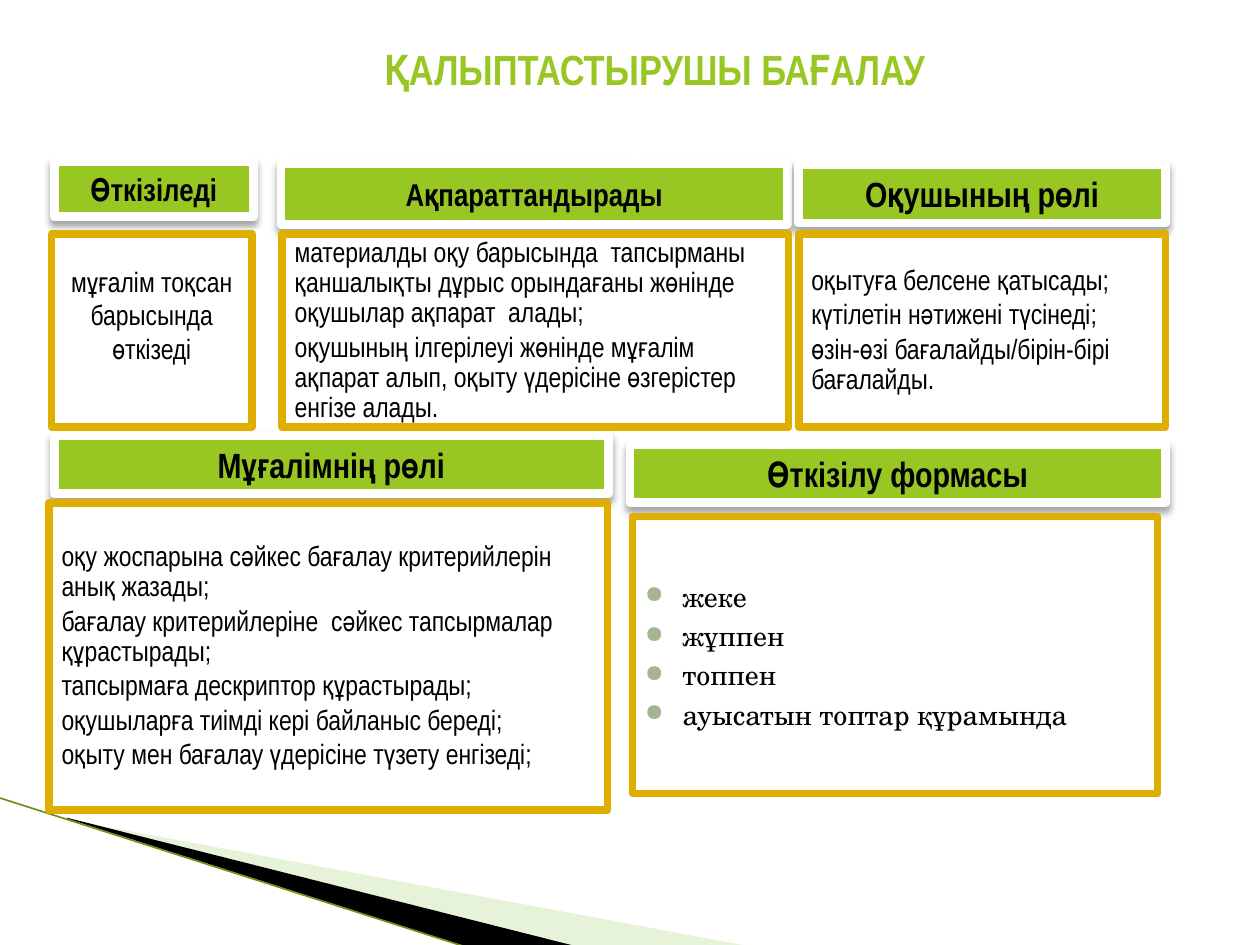
from dataclasses import dataclass

from lxml import etree
from pptx import Presentation
from pptx.dml.color import RGBColor
from pptx.enum import shapes, text
from pptx.oxml import ns
from pptx.util import Pt

GREEN = RGBColor(0x98, 0xC7, 0x23)
PALE = RGBColor(0xC5, 0xE1, 0x9F)
OLIVE = RGBColor(0x71, 0x8F, 0x1A)
GOLD = RGBColor(0xDE, 0xAE, 0x00)
BLACK = RGBColor(0, 0, 0)
WHITE = RGBColor(0xFF, 0xFF, 0xFF)
SAGE = RGBColor(0xA5, 0xB5, 0x92)
NARROW = "Arial Narrow"
SERIF = "TeX Gyre Schola"
LEFT = text.PP_ALIGN.LEFT
MID = text.PP_ALIGN.CENTER


@dataclass
class Head:
    x: float
    y: float
    w: float
    h: float
    label: str
    size: int = 20


@dataclass
class Body:
    x: float
    y: float
    w: float
    h: float
    lines: list[str]
    align: int = LEFT
    font: str = NARROW
    bullet: bool = False
    foot: float = 3.6


HEADS = [
    Head(31, 92.2, 113.8, 31.7, "Өткізіледі", 18),
    Head(160.6, 93.6, 289.4, 34.6, "Ақпараттандырады", 18),
    Head(456.5, 94.3, 209.5, 33.1, "Оқушының рөлі"),
    Head(31, 249.1, 316.8, 33.1, "Мұғалімнің рөлі"),
    Head(360, 254.2, 306, 33.1, "Өткізілу формасы"),
]

BODIES = [
    Body(29.5, 133.9, 114.5, 110.2, ["мұғалім тоқсан барысында өткізеді"], MID, foot=22),
    Body(161.3, 133.9, 289.4, 110.2, [
        "материалды оқу барысында  тапсырманы қаншалықты дұрыс орындағаны "
        "жөнінде оқушылар ақпарат  алады;",
        "оқушының ілгерілеуі жөнінде мұғалім ақпарат алып, оқыту үдерісіне "
        "өзгерістер енгізе алады.",
    ]),
    Body(456.5, 133.9, 209.5, 110.2, [
        "оқытуға белсене қатысады;",
        "күтілетін нәтижені түсінеді;",
        "өзін-өзі бағалайды/бірін-бірі бағалайды.",
    ]),
    Body(28.1, 287.3, 319, 175.7, [
        "оқу жоспарына сәйкес бағалау критерийлерін анық жазады;",
        "бағалау критерийлеріне  сәйкес тапсырмалар құрастырады;",
        "тапсырмаға дескриптор құрастырады;",
        "оқушыларға тиімді кері байланыс береді;",
        "оқыту мен бағалау үдерісіне түзету енгізеді;",
    ]),
    Body(361.4, 295.2, 300.2, 158.4,
         ["жеке", "жұппен", "топпен", "ауысатын топтар құрамында"],
         font=SERIF, bullet=True),
]


def add_node(root, tag: str, **attrs: str):
    return etree.SubElement(root, ns.qn(tag), attrs)


def set_font(para, name: str, size: float, color: RGBColor, bold: bool = False) -> None:
    for run in para.runs:
        font = run.font
        font.name, font.size, font.bold = name, Pt(size), bold
        font.color.rgb = color


def add_box(slide, item: Head | Body, fill: RGBColor, edge: RGBColor, width: float):
    box = slide.shapes.add_shape(
        shapes.MSO_SHAPE.RECTANGLE, Pt(item.x), Pt(item.y), Pt(item.w), Pt(item.h))
    box.shadow.inherit = False
    box.fill.solid()
    box.fill.fore_color.rgb = fill
    box.line.color.rgb = edge
    box.line.width = Pt(width)
    box.text_frame.word_wrap = True
    box.text_frame.vertical_anchor = text.MSO_ANCHOR.MIDDLE
    return box


def add_head(slide, head: Head) -> None:
    box = add_box(slide, head, GREEN, WHITE, 5)
    glow = add_node(box._element.spPr.find(ns.qn("a:effectLst")), "a:outerShdw",
                    blurRad=str(Pt(4)), dist=str(Pt(3)), dir="5400000", rotWithShape="0")
    add_node(add_node(glow, "a:srgbClr", val=str(BLACK)), "a:alpha", val="35000")
    box.text_frame.text = head.label
    para = box.text_frame.paragraphs[0]
    para.alignment = MID
    set_font(para, NARROW, head.size, BLACK, True)


def add_bullet(para) -> None:
    props = para._p.get_or_add_pPr()
    props.set("marL", str(Pt(21.6)))
    props.set("indent", str(Pt(-21.6)))
    add_node(add_node(props, "a:buClr"), "a:srgbClr", val=str(SAGE))
    add_node(props, "a:buSzPct", val="85000")
    add_node(props, "a:buChar", char="●")


def add_body(slide, body: Body) -> None:
    frame = add_box(slide, body, WHITE, GOLD, 4.33).text_frame
    frame.margin_bottom = Pt(body.foot)
    frame.text = "\n".join(body.lines)
    for i, para in enumerate(frame.paragraphs):
        if body.bullet:
            add_bullet(para)
            para.space_before = Pt(3.2 if i else 0)
        elif body.align == LEFT:
            para.line_spacing = 0.9
            para.space_after = Pt(2.4)
        para.alignment = body.align
        set_font(para, body.font, 16, BLACK)


def add_wedge(slide, dots: list[tuple[float, float]], color: RGBColor, alpha: int) -> None:
    pen = slide.shapes.build_freeform(Pt(dots[0][0]), Pt(dots[0][1]))
    pen.add_line_segments([(Pt(x), Pt(y)) for x, y in dots[1:]], close=True)
    wedge = pen.convert_to_shape()
    wedge.shadow.inherit = False
    wedge.fill.solid()
    wedge.fill.fore_color.rgb = color
    wedge.line.fill.background()
    if alpha < 100:
        tone = wedge._element.spPr.find(".//" + ns.qn("a:srgbClr"))
        add_node(tone, "a:alpha", val=str(alpha * 1000))


def add_edge(slide) -> None:
    edge = slide.shapes.add_connector(
        shapes.MSO_CONNECTOR.STRAIGHT, Pt(-0.7), Pt(455.8), Pt(267.1), Pt(541.4))
    edge.line.color.rgb = OLIVE
    edge.line.width = Pt(0.95)
    add_node(edge._element.spPr, "a:effectLst")


def add_title(slide) -> None:
    title = slide.shapes.title
    title.left, title.top, title.width, title.height = Pt(87.1), Pt(9.4), Pt(573.8), Pt(59.8)
    title.text_frame.text = "ҚАЛЫПТАСТЫРУШЫ БАҒАЛАУ"
    title.text_frame.vertical_anchor = text.MSO_ANCHOR.MIDDLE
    para = title.text_frame.paragraphs[0]
    para.alignment = MID
    set_font(para, NARROW, 24, GREEN, True)


def main() -> None:
    deck = Presentation()
    deck.slide_width, deck.slide_height = Pt(720), Pt(540)
    slide = deck.slides.add_slide(deck.slide_layouts[5])
    add_wedge(slide, [(39.6, 468.5), (428.4, 540.7), (328.3, 540.7), (39.6, 468)], PALE, 40)
    add_wedge(slide, [(38.2, 467.3), (329, 540.7), (267.8, 541.4), (38.9, 468)], BLACK, 100)
    add_edge(slide)
    add_title(slide)
    for head in HEADS[:3]:
        add_head(slide, head)
    for body in BODIES[:3]:
        add_body(slide, body)
    for head, body in zip(HEADS[3:], BODIES[3:]):
        add_head(slide, head)
        add_body(slide, body)
    deck.save("out.pptx")


if __name__ == "__main__":
    main()
